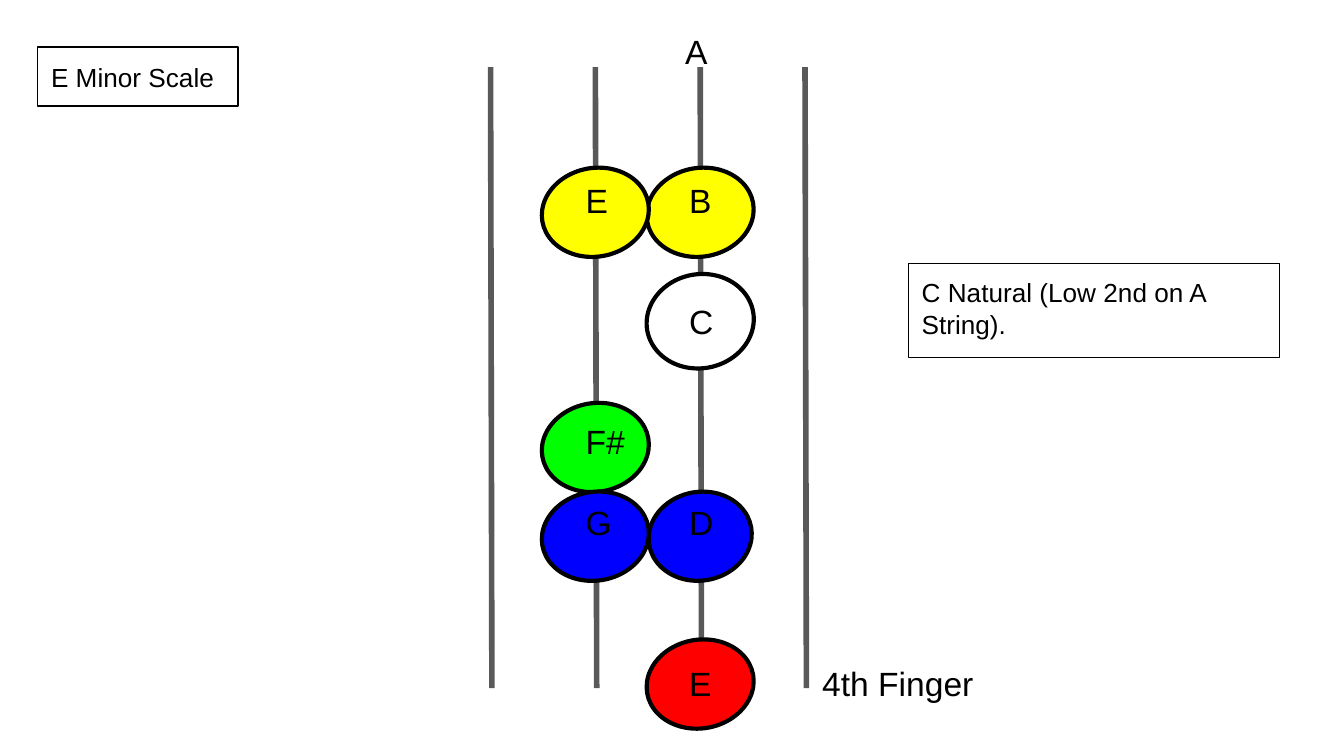
from pptx import Presentation
from pptx.dml.color import RGBColor
from pptx.enum.shapes import MSO_CONNECTOR, MSO_SHAPE
from pptx.enum.text import MSO_ANCHOR, MSO_AUTO_SIZE, PP_ALIGN
from pptx.oxml.ns import qn
from pptx.util import Inches, Pt
from lxml import etree

LINE, OVAL = MSO_CONNECTOR.STRAIGHT, MSO_SHAPE.OVAL
LEFT, NO_FIT = PP_ALIGN.LEFT, MSO_AUTO_SIZE.NONE
TOP, MIDDLE = MSO_ANCHOR.TOP, MSO_ANCHOR.MIDDLE

THEME = {
    "font": "Arial", "note": 18, "caption": 14,
    "ink": "000000", "string": "595959",
    "yellow": "FFFF00", "white": "FFFFFF", "green": "00FF00",
    "blue": "0000FF", "red": "FF0000",
}

# Content
TITLE = "E Minor Scale"
CAPTION = "C Natural (Low 2nd on A String)."
OPEN_STRING = "A"
# Finger spots, back to front: string number, centre y, width, height, colour
FINGERS = [
    (2, 5.09, 0.80, 0.66, "red"),
    (2, 1.58, 0.80, 0.66, "yellow"),
    (2, 3.99, 0.77, 0.66, "blue"),
    (2, 2.39, 0.80, 0.70, "white"),
    (1, 1.58, 0.80, 0.66, "yellow"),
    (1, 3.33, 0.80, 0.66, "green"),
    (1, 3.99, 0.80, 0.66, "blue"),
]
# Note names by row: text with one tab per column, space before in points
NOTES = [
    ("E\tB", 0),
    ("\tC", 43),
    ("F#", 43),
    ("G\tD", 21.6),
    ("\tE\t4th Finger", 64.6),
]
NOTE_TABS = (0.77, 1.76)

# Fingerboard grid, in inches
STRINGS, STRING_X, STRING_GAP, STRING_LEAN = 4, 3.65, 0.78, 0.01
STRING_TOP, STRING_END = 0.5, 5.12
TILT = -9.9


def color(name):
    return RGBColor.from_string(THEME[name])


def string_x(n):
    return STRING_X + n * STRING_GAP


def outline(sp, name, width):
    sp.line.color.rgb = color(name)
    sp.line.width = Pt(width)


def place(sp, box):
    for name, value in zip(("left", "top", "width", "height"), box):
        setattr(sp, name, Inches(value))


def write(sp, rows, size, anchor=TOP):
    tf = sp.text_frame
    fmt = {"word_wrap": True, "auto_size": NO_FIT, "vertical_anchor": anchor}
    fmt.update({f"margin_{side}": Inches(0.1)
                for side in ("left", "top", "right", "bottom")})
    for name, value in fmt.items():
        setattr(tf, name, value)
    for i, (text, before) in enumerate(rows):
        p = tf.add_paragraph() if i else tf.paragraphs[0]
        p.alignment, p.space_before = LEFT, Pt(before)
        r = p.add_run()
        r.text = text
        r.font.name, r.font.size = THEME["font"], Pt(THEME[size])
        r.font.color.rgb = color("ink")


def add_text(slide, box, rows, size):
    sp = slide.shapes.add_textbox(*map(Inches, box))
    write(sp, rows, size)
    return sp


def add_string(slide, n):
    x = string_x(n)
    c = slide.shapes.add_connector(
        LINE, Inches(x), Inches(STRING_TOP),
        Inches(x + STRING_LEAN), Inches(STRING_END))
    outline(c, "string", 3)
    etree.SubElement(c._element.spPr, qn("a:effectLst"))


def add_finger(slide, n, y, w, h, fill):
    box = (string_x(n) - w / 2, y - h / 2, w, h)
    sp = slide.shapes.add_shape(OVAL, *map(Inches, box))
    sp.rotation = TILT
    sp.shadow.inherit = False
    sp.fill.solid()
    sp.fill.fore_color.rgb = color(fill)
    outline(sp, "ink", 2.25)


def set_tabs(sp, stops):
    for p in sp.text_frame.paragraphs:
        tabs = etree.SubElement(p._p.get_or_add_pPr(), qn("a:tabLst"))
        for stop in stops:
            etree.SubElement(tabs, qn("a:tab"), pos=str(int(Inches(stop))), algn="l")


def main():
    prs = Presentation()
    prs.slide_width = Inches(10)
    prs.slide_height = prs.slide_width * 9 // 16
    slide = prs.slides.add_slide(prs.slide_layouts[5])

    # Title
    title = slide.shapes.title
    place(title, (0.28, 0.35, 1.49, 0.44))
    write(title, [(TITLE, 0)], "caption", MIDDLE)
    outline(title, "ink", 0.75)

    # Strings and finger spots
    for n in range(STRINGS):
        add_string(slide, n)
    for finger in FINGERS:
        add_finger(slide, *finger)

    # Note names
    add_text(slide, (5, 0.13, 0.28, 0.3), [(OPEN_STRING, 0)], "note")
    notes = add_text(slide, (4.26, 1.24, 3.4, 4.19), NOTES, "note")
    set_tabs(notes, NOTE_TABS)

    # Caption
    caption = add_text(slide, (6.76, 1.96, 2.76, 0.7), [(CAPTION, 0)], "caption")
    outline(caption, "ink", 0.75)

    prs.save("out.pptx")


if __name__ == "__main__":
    main()
